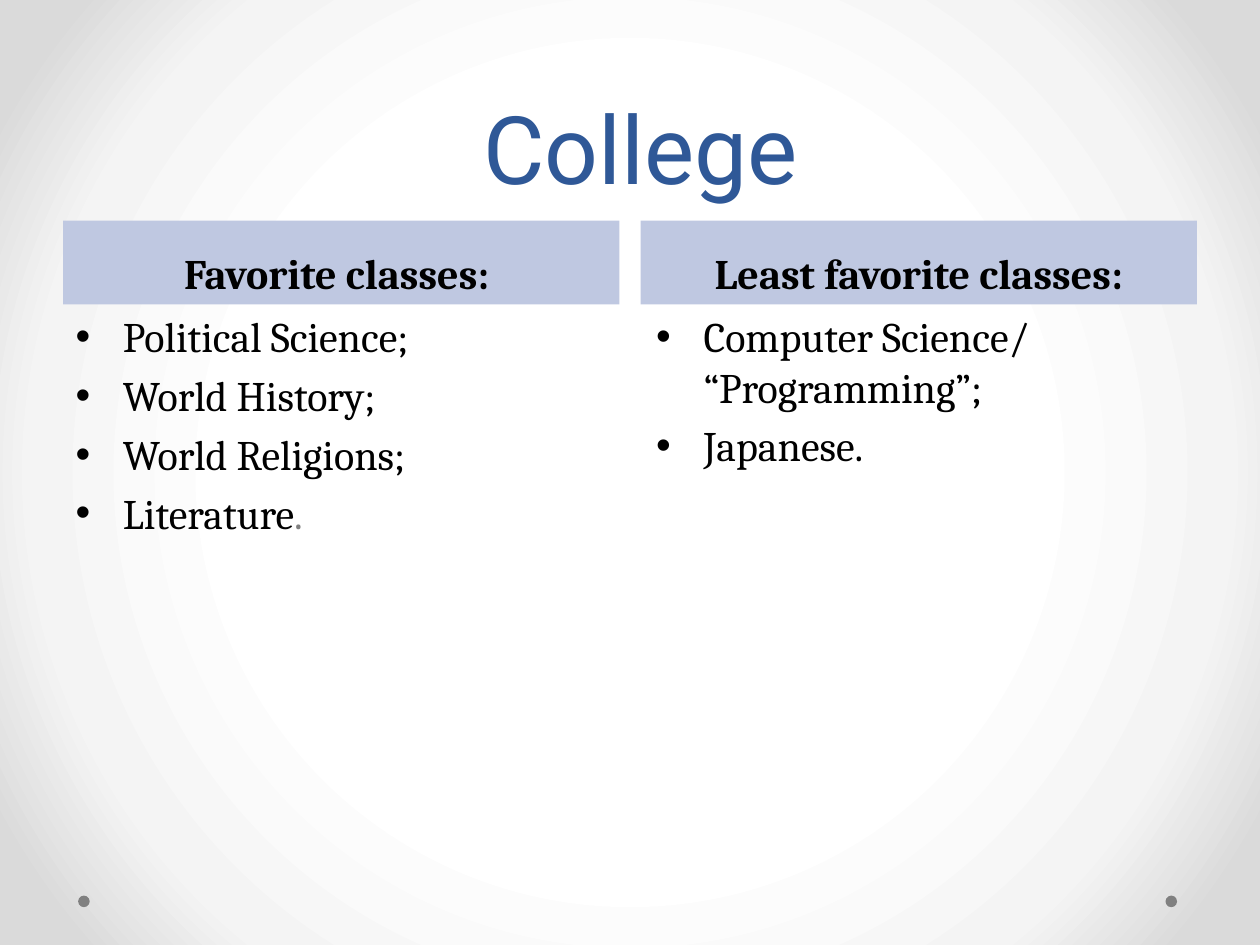
from lxml import etree
from pptx import Presentation
from pptx import util as u
from pptx.dml.color import RGBColor
from pptx.enum import shapes, text
from pptx.oxml import parse_xml
from pptx.oxml.ns import nsdecls, qn

COLUMNS, ROWS = 120, 90
BLACK, GREY, BLUE, PALE = "000000", "808080", "2F5897", "BFC8E1"


def color(value):
    return RGBColor.from_string(value)


def write(paragraph, content, font="Cambria", size=24, fill=BLACK, bold=False,
          align=None, before=4.8, line=None):
    run = paragraph.add_run()
    run.text = content
    run.font.name = font
    run.font.size = u.Pt(size)
    run.font.bold = bold
    run.font.color.rgb = color(fill)
    paragraph.alignment = align
    paragraph.space_before = u.Pt(before)
    if line:
        paragraph.line_spacing = u.Pt(line)


class Page:
    def __init__(self, presentation):
        self.slide = presentation.slides.add_slide(presentation.slide_layouts[4])
        self.column = presentation.slide_width / COLUMNS
        self.row = presentation.slide_height / ROWS

    def place(self, left, top, width, height):
        return (round(left * self.column), round(top * self.row),
                round(width * self.column), round(height * self.row))

    def background(self, stops):
        self.slide.background.fill.gradient()
        gradient = next(self.slide.element.iter(qn("a:gradFill")))
        radial = parse_xml(
            f'<a:gradFill {nsdecls("a")} rotWithShape="1"><a:gsLst/><a:path path="circle">'
            '<a:fillToRect l="50000" t="50000" r="50000" b="50000"/></a:path></a:gradFill>')
        for position, value in stops:
            stop = etree.SubElement(radial[0], qn("a:gs"), pos=str(position * 1000))
            etree.SubElement(stop, qn("a:srgbClr"), val=value)
        gradient.getparent().replace(gradient, radial)

    def placeholder(self, index, box, anchor):
        shape = self.slide.placeholders[index]
        shape.left, shape.top, shape.width, shape.height = self.place(*box)
        frame = shape.text_frame
        frame.word_wrap = True
        frame.auto_size = text.MSO_AUTO_SIZE.NONE
        frame.vertical_anchor = anchor
        return shape

    def title(self, content, box):
        shape = self.placeholder(0, box, text.MSO_ANCHOR.BOTTOM)
        write(shape.text_frame.paragraphs[0], content, font="Roboto", size=54,
              fill=BLUE, align=text.PP_ALIGN.CENTER, before=0, line=58)

    def heading(self, index, content, box):
        shape = self.placeholder(index, box, text.MSO_ANCHOR.BOTTOM)
        shape.fill.solid()
        shape.fill.fore_color.rgb = color(PALE)
        write(shape.text_frame.paragraphs[0], content, bold=True,
              align=text.PP_ALIGN.CENTER)

    def bullets(self, index, items, box):
        frame = self.placeholder(index, box, text.MSO_ANCHOR.TOP).text_frame
        for number, runs in enumerate(items):
            paragraph = frame.add_paragraph() if number else frame.paragraphs[0]
            for content, fill in runs:
                write(paragraph, content, fill=fill)

    def dot(self, left, top, size):
        shape = self.slide.shapes.add_shape(
            shapes.MSO_SHAPE.OVAL, *self.place(left, top, size, size))
        shape.shadow.inherit = False
        shape.fill.solid()
        shape.fill.fore_color.rgb = color(GREY)
        shape.line.fill.background()


def main():
    presentation = Presentation()
    presentation.slide_width, presentation.slide_height = u.Inches(10), u.Inches(7.5)
    page = Page(presentation)
    page.background([(50, "FFFFFF"), (76, "F4F4F4"), (92, "DADADA")])
    page.title("College", (7, 5, 108, 15))
    favorites = [[("Political Science;", BLACK)], [("World History;", BLACK)],
                 [("World Religions;", BLACK)], [("Literature", BLACK), (".", GREY)]]
    least = [[("Computer Science/ “Programming”;", BLACK)], [("Japanese.", BLACK)]]
    sections = [(1, 6, 6, "Favorite classes: ", favorites),
                (3, 61, 61.3, "Least favorite classes:", least)]
    for index, left, list_left, heading, items in sections:
        page.heading(index, heading, (left, 21, 53, 8))
        page.bullets(index + 1, items, (list_left, 29, 53, 51.4))
    for left in (7.44, 111):
        page.dot(left, 85.3, 1.1)
    presentation.save("out.pptx")


if __name__ == "__main__":
    main()
